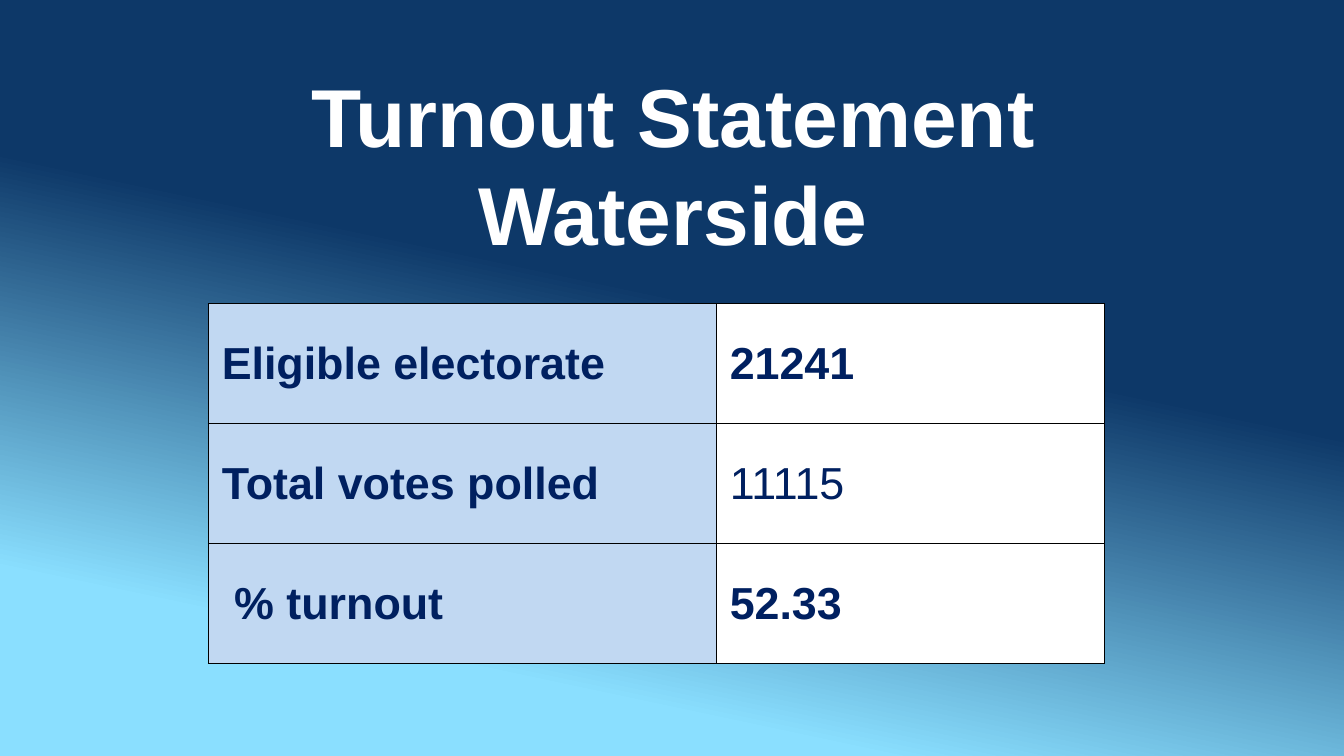
from dataclasses import dataclass

from lxml import etree
from pptx import Presentation
from pptx.dml.color import RGBColor
from pptx.enum.text import MSO_ANCHOR, PP_ALIGN
from pptx.oxml.ns import qn
from pptx.util import Inches, Pt

BOTTOM, MIDDLE = MSO_ANCHOR.BOTTOM, MSO_ANCHOR.MIDDLE
CENTER = PP_ALIGN.CENTER

SLIDE_WIDTH = 10
SLIDE_HEIGHT = SLIDE_WIDTH * 9 / 16


@dataclass(frozen=True)
class Theme:
    font: str = "Arial"
    title_size: int = 44
    table_size: int = 24
    title: str = "FFFFFF"
    text: str = "002060"
    label_fill: str = "C1D8F2"
    value_fill: str = "FFFFFF"
    border: str = "000000"
    border_width: float = 0.5
    gradient: tuple = ((0.42, "0D3868"), (0.82, "8ADFFF"))
    gradient_angle: int = 258


THEME = Theme()

TITLE_LINES = ("Turnout Statement", "Waterside")
# label, value, whether the value is bold
TURNOUT_ROWS = (
    ("Eligible electorate", "21241", True),
    ("Total votes polled", "11115", False),
    (" % turnout", "52.33", True),
)


def style_runs(p, size, color, bold=True):
    for r in p.runs:
        r.font.name = THEME.font
        r.font.size = Pt(size)
        r.font.bold = bold
        r.font.color.rgb = RGBColor.from_string(color)


def paint_background(slide):
    fill = slide.background.fill
    fill.gradient()
    fill.gradient_angle = THEME.gradient_angle
    for stop, (position, color) in zip(fill.gradient_stops, THEME.gradient):
        stop.position = position
        stop.color.rgb = RGBColor.from_string(color)


def add_title(slide, left, top, width, height):
    box = slide.shapes.add_textbox(
        Inches(left), Inches(top), Inches(width), Inches(height))
    tf = box.text_frame
    tf.word_wrap = True
    tf.vertical_anchor = BOTTOM
    tf.margin_left = tf.margin_top = tf.margin_bottom = 0
    tf.margin_right = Inches(0.02)
    tf.text = "\n".join(TITLE_LINES)
    for p in tf.paragraphs:
        p.alignment = CENTER
        style_runs(p, THEME.title_size, THEME.title)


def set_borders(cell):
    """Put a line on all four sides; lines must precede the cell's fill."""
    tcPr = cell._tc.get_or_add_tcPr()
    for i, side in enumerate(("a:lnL", "a:lnR", "a:lnT", "a:lnB")):
        ln = etree.Element(qn(side), w=str(Pt(THEME.border_width)))
        fill = etree.SubElement(ln, qn("a:solidFill"))
        etree.SubElement(fill, qn("a:srgbClr"), val=THEME.border)
        tcPr.insert(i, ln)


def fill_cell(cell, text, fill, bold):
    cell.text = text
    cell.vertical_anchor = MIDDLE
    cell.fill.solid()
    cell.fill.fore_color.rgb = RGBColor.from_string(fill)
    style_runs(cell.text_frame.paragraphs[0], THEME.table_size, THEME.text, bold)
    set_borders(cell)


def add_turnout_table(slide, left, top, height, col_widths):
    table = slide.shapes.add_table(
        len(TURNOUT_ROWS), len(col_widths), Inches(left), Inches(top),
        Inches(sum(col_widths)), Inches(height)).table
    for column, width in zip(table.columns, col_widths):
        column.width = Inches(width)
    for i, (label, value, bold) in enumerate(TURNOUT_ROWS):
        fill_cell(table.cell(i, 0), label, THEME.label_fill, True)
        fill_cell(table.cell(i, 1), value, THEME.value_fill, bold)


def main():
    prs = Presentation()
    prs.slide_width = Inches(SLIDE_WIDTH)
    prs.slide_height = Inches(SLIDE_HEIGHT)
    slide = prs.slides.add_slide(prs.slide_layouts[6])
    paint_background(slide)
    add_title(slide, 0.04, 0.61, 9.96, 1.34)
    add_turnout_table(slide, 1.55, 2.26, 2.68, (3.78, 2.89))
    prs.save("out.pptx")


if __name__ == "__main__":
    main()
